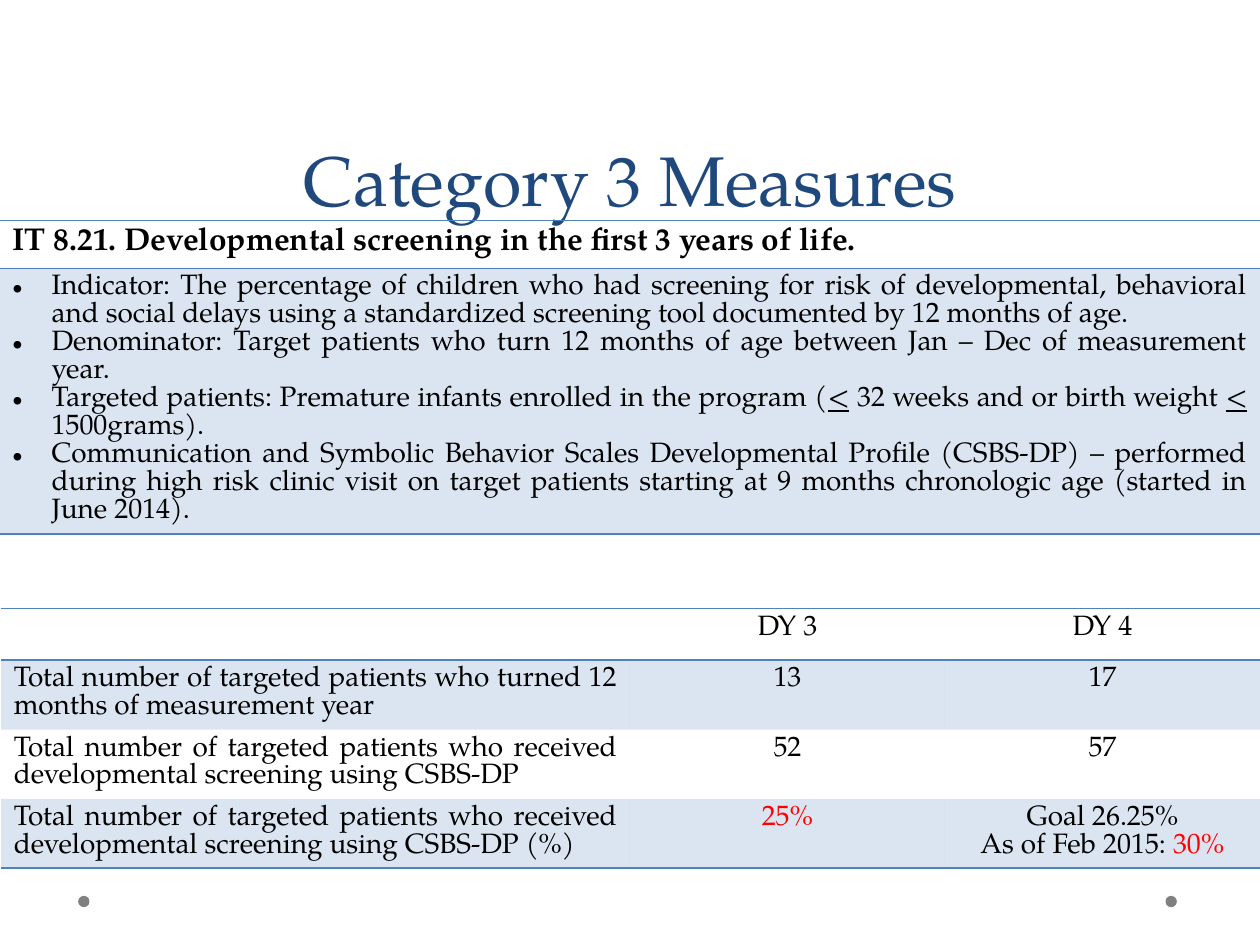
import pptx
import pptx.dml.color
import pptx.enum.shapes
import pptx.enum.text
import pptx.oxml
import pptx.oxml.ns
import pptx.util
from lxml import etree

Inches, Pt = pptx.util.Inches, pptx.util.Pt
RGBColor = pptx.dml.color.RGBColor
ALIGN = pptx.enum.text.PP_ALIGN
qn = pptx.oxml.ns.qn

NAVY = RGBColor(0x1F, 0x49, 0x7D)
BLUE = RGBColor(0x4F, 0x81, 0xBD)
GRAY = RGBColor(0x80, 0x80, 0x80)
BLACK = RGBColor(0, 0, 0)
RED = RGBColor(0xFF, 0, 0)
PLAIN_TABLE_STYLE = "{2D5ABB26-0587-4C30-8999-92F81FD0307C}"

UNDERLINE = {"underline": True}
ALERT = {"color": RED}
INDICATOR_POINTS = [
    ["Indicator: The percentage of children who had screening for risk of developmental, "
     "behavioral and social delays using a standardized screening tool documented by "
     "12 months of age."],
    ["Denominator: Target patients who turn 12 months of age between Jan – Dec of "
     "measurement year."],
    ["Targeted patients: Premature infants enrolled in the program (", ("<", UNDERLINE),
     " 32 weeks and or birth weight ", ("<", UNDERLINE), " 1500grams)."],
    ["Communication and Symbolic Behavior Scales Developmental Profile (CSBS-DP) – "
     "performed during high risk clinic visit on target patients starting at 9 months "
     "chronologic age (started in June 2014)."],
]
RECEIVED = "Total number of targeted patients who received developmental screening using CSBS-DP"
RESULTS = [
    [[[""]], [["DY 3"]], [["DY 4"]]],
    [[["Total number of targeted patients who turned 12 months of measurement year"]],
     [["13"]], [["17"]]],
    [[[RECEIVED]], [["52"]], [["57"]]],
    [[[RECEIVED + " (%)"]], [[("25%", ALERT)]],
     [["Goal 26.25%"], ["As of Feb 2015: ", ("30%", ALERT)]]],
]


class SlideBuilder:
    font = "TeX Gyre Pagella"

    def __init__(self, slide):
        self.s = slide

    def fill_text(self, tf, paragraphs, size, align, spacing=None, bullet=False, **formats):
        """Fill a text frame; each paragraph lists strings or (string, formats) pairs."""
        for i, parts in enumerate(paragraphs):
            p = tf.paragraphs[0] if i == 0 else tf.add_paragraph()
            p.alignment = align
            p.line_spacing = Pt(spacing or size)
            if bullet:
                self.bullet(p)
            for part in parts:
                text, extra = (part, {}) if isinstance(part, str) else part
                r = p.add_run()
                r.text = text
                values = {"name": self.font, "size": Pt(size), "color": BLACK,
                          **formats, **extra}
                r.font.color.rgb = values.pop("color")
                for name, value in values.items():
                    setattr(r.font, name, value)

    def bullet(self, p):
        pPr = p._p.get_or_add_pPr()
        pPr.set("marL", str(Inches(0.31)))
        pPr.set("indent", str(-Inches(0.31)))
        etree.SubElement(pPr, qn("a:buFont")).set("typeface", "Arial")
        etree.SubElement(pPr, qn("a:buChar")).set("char", "•")

    def title(self, text, x, y, w, h):
        tf = self.s.shapes.add_textbox(Inches(x), Inches(y), Inches(w), Inches(h)).text_frame
        for name, value in {"word_wrap": True, "margin_bottom": 0,
                            "vertical_anchor": pptx.enum.text.MSO_ANCHOR.BOTTOM}.items():
            setattr(tf, name, value)
        self.fill_text(tf, [[text]], 40, ALIGN.CENTER, spacing=58, color=NAVY)

    def dot(self, x, y, d):
        sp = self.s.shapes.add_shape(pptx.enum.shapes.MSO_SHAPE.OVAL,
                                     Inches(x), Inches(y), Inches(d), Inches(d))
        sp.shadow.inherit = False
        sp.fill.solid()
        sp.fill.fore_color.rgb = GRAY
        sp.line.fill.background()

    def table(self, x, y, widths, heights):
        """Add a plain table with ruled header and bottom, and odd rows tinted."""
        frame = self.s.shapes.add_table(len(heights), len(widths), Inches(x), Inches(y),
                                        Inches(sum(widths)), Inches(sum(heights)))
        table = frame.table
        table.first_row = table.horz_banding = False
        table._tbl.tblPr.find(qn("a:tableStyleId")).text = PLAIN_TABLE_STYLE
        for column, width in zip(table.columns, widths):
            column.width = Inches(width)
        for i, (row, height) in enumerate(zip(table.rows, heights)):
            row.height = Inches(height)
            for cell in row.cells:
                if i == 0:
                    self.border(cell, "a:lnT")
                if i in (0, len(heights) - 1):
                    self.border(cell, "a:lnB")
                self.tint(cell, i % 2)
        return table

    def border(self, cell, side):
        ln = etree.SubElement(cell._tc.get_or_add_tcPr(), qn(side))
        ln.set("w", str(Pt(1)))
        fill = etree.SubElement(ln, qn("a:solidFill"))
        etree.SubElement(fill, qn("a:srgbClr")).set("val", str(BLUE))

    def tint(self, cell, shaded):
        if not shaded:
            cell.fill.background()
            return
        cell.fill.solid()
        cell.fill.fore_color.rgb = BLUE
        color = cell._tc.tcPr.find(qn("a:solidFill")).find(qn("a:srgbClr"))
        etree.SubElement(color, qn("a:alpha")).set("val", "20000")


def main():
    prs = pptx.Presentation()
    prs.slide_width, prs.slide_height = Inches(10), Inches(7.5)
    b = SlideBuilder(prs.slides.add_slide(prs.slide_layouts[6]))

    for x in (9.25, 0.62):
        b.dot(x, 7.11, 0.09)
    b.title("Category 3 Measures", 0.5, 0.42, 9, 1.33)

    measure = b.table(0, 1.75, [10], [0.38, 2.11])
    b.fill_text(measure.cell(0, 0).text_frame,
                [["IT 8.21. Developmental screening in the first 3 years of life."]],
                18, ALIGN.LEFT, bold=True)
    b.fill_text(measure.cell(1, 0).text_frame, INDICATOR_POINTS, 16, ALIGN.JUSTIFY,
                bullet=True)

    results = b.table(0.01, 4.83, [4.99, 2.5, 2.5], [0.41, 0.55, 0.55, 0.55])
    for i, row in enumerate(RESULTS):
        for j, paragraphs in enumerate(row):
            b.fill_text(results.cell(i, j).text_frame, paragraphs, 16,
                        ALIGN.CENTER if j else ALIGN.JUSTIFY)

    prs.save("out.pptx")


if __name__ == "__main__":
    main()
